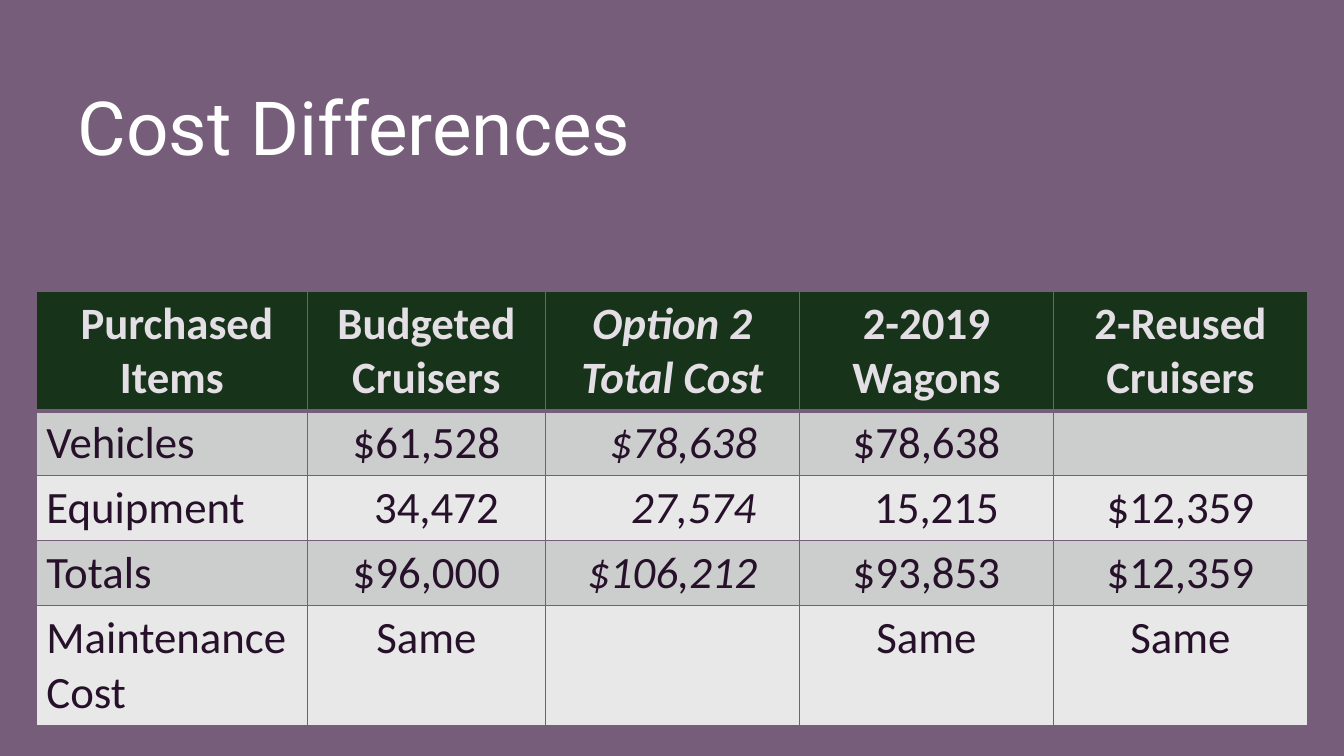
from lxml import etree
from pptx import Presentation
from pptx.dml.color import RGBColor
from pptx.enum.text import MSO_ANCHOR, PP_ALIGN
from pptx.oxml.ns import qn
from pptx.util import Inches, Pt

MID = MSO_ANCHOR.MIDDLE
LEFT, CENTER = PP_ALIGN.LEFT, PP_ALIGN.CENTER

TITLE = "Cost Differences"
ROWS = [
    [" Purchased Items", "Budgeted Cruisers", "Option 2 Total Cost", "2-2019 Wagons", "2-Reused Cruisers"],
    ["Vehicles", "$61,528", "$78,638", "$78,638", ""],
    ["Equipment", "34,472", "27,574", "15,215", "$12,359"],
    ["Totals", "$96,000", "$106,212", "$93,853", "$12,359"],
    ["Maintenance Cost", "Same", "", "Same", "Same"],
]
WIDTHS = [2.69, 2.36, 2.52, 2.52, 2.52]
HEIGHTS = [1.18, 0.64, 0.64, 0.64, 1.18]
INDENTS = {(1, 2): 0.22, (2, 1): 0.2, (2, 2): 0.42, (2, 3): 0.2}
OPTION = 2

THEME = {
    "back": "765D7A", "title": "FFFFFF", "head": "17341A", "label": "E4DEE5",
    "text": "26102A", "bands": ["E8E8E8", "CCCECD"],
    "title_font": "Roboto", "font": "Calibri", "title_size": 53.3, "size": 32,
}


def color(name):
    return RGBColor.from_string(THEME[name])


def style(font, face, size, tint):
    font.name, font.size = THEME[face], Pt(THEME[size])
    font.color.rgb = color(tint)


def edge(cell, side, width):
    line = etree.SubElement(cell._tc.get_or_add_tcPr(), qn("a:ln" + side), w=str(Pt(width)))
    fill = etree.SubElement(line, qn("a:solidFill"))
    etree.SubElement(fill, qn("a:srgbClr"), val=THEME["back"])


def fill_cell(cell, row, col, text):
    head = row == 0
    for side in "LRTB":
        thick = (head and side == "B") or (row == 1 and side == "T")
        edge(cell, side, 3 if thick else 1)
    cell.fill.solid()
    tint = THEME["head"] if head else THEME["bands"][row % 2]
    cell.fill.fore_color.rgb = RGBColor.from_string(tint)
    cell.text_frame.text = text
    para = cell.text_frame.paragraphs[0]
    para.alignment = CENTER if head or col else LEFT
    if (row, col) in INDENTS:
        para._p.get_or_add_pPr().set("marL", str(Inches(INDENTS[row, col])))
    for run in para.runs:
        style(run.font, "font", "size", "label" if head else "text")
        run.font.bold = head
        run.font.italic = col == OPTION


def add_costs(slide):
    frame = slide.shapes.add_table(
        len(ROWS), len(WIDTHS), Inches(0.36), Inches(2.89),
        Inches(sum(WIDTHS)), Inches(sum(HEIGHTS)))
    table = frame.table
    for col, width in enumerate(WIDTHS):
        table.columns[col].width = Inches(width)
    for row, texts in enumerate(ROWS):
        table.rows[row].height = Inches(HEIGHTS[row])
        for col, text in enumerate(texts):
            fill_cell(table.cell(row, col), row, col, text)


def add_title(slide):
    title = slide.shapes.title
    title.left, title.top = Inches(0.67), Inches(0.62)
    title.width, title.height = Inches(12), Inches(1.25)
    frame = title.text_frame
    frame.text = TITLE
    frame.vertical_anchor = MID
    para = frame.paragraphs[0]
    para.alignment = LEFT
    style(para.runs[0].font, "title_font", "title_size", "title")


def main():
    deck = Presentation()
    deck.slide_width, deck.slide_height = Inches(13.33), Inches(7.5)
    slide = deck.slides.add_slide(deck.slide_layouts[5])
    slide.background.fill.solid()
    slide.background.fill.fore_color.rgb = color("back")
    add_title(slide)
    add_costs(slide)
    deck.save("out.pptx")


if __name__ == "__main__":
    main()
